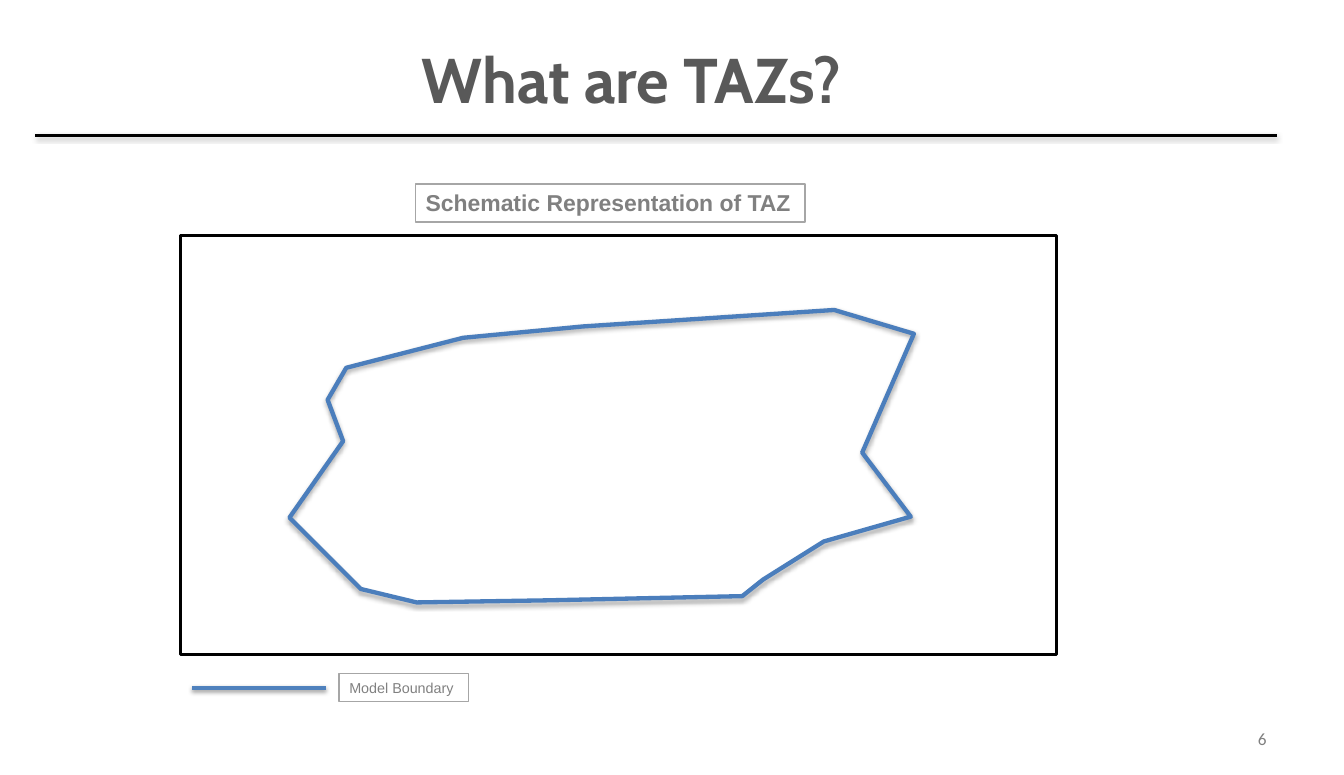
from dataclasses import dataclass

import lxml.etree
import pptx
import pptx.dml.color
import pptx.enum.shapes
import pptx.enum.text
import pptx.oxml.ns
import pptx.util

Pt = pptx.util.Pt
Align = pptx.enum.text.PP_ALIGN
Anchor = pptx.enum.text.MSO_ANCHOR


@dataclass
class Label:
    text: str
    left: float
    top: float
    width: float
    height: float
    font: dict
    color: str
    align: Align = Align.LEFT
    anchor: Anchor = Anchor.TOP
    border: str = ""


@dataclass
class Rule:
    left: float
    right: float
    y: float
    color: str
    weight: float


def rgb(value: str) -> pptx.dml.color.RGBColor:
    return pptx.dml.color.RGBColor.from_string(value)


def set_line(shape, color: str, weight: float) -> None:
    shape.line.color.rgb = rgb(color)
    shape.line.width = Pt(weight)


def add_shadow(shape, opacity: int, distance: float) -> None:
    """Give an outlined shape a soft black shadow straight below it."""
    qn = pptx.oxml.ns.qn
    effects = lxml.etree.SubElement(shape._element.spPr, qn("a:effectLst"))
    shadow = lxml.etree.SubElement(
        effects, qn("a:outerShdw"), blurRad=str(Pt(3.1)),
        dist=str(Pt(distance)), dir="5400000", rotWithShape="0")
    color = lxml.etree.SubElement(shadow, qn("a:srgbClr"), val="000000")
    lxml.etree.SubElement(color, qn("a:alpha"), val=str(opacity * 1000))


def add_label(slide, label: Label) -> None:
    shape = slide.shapes.add_textbox(
        Pt(label.left), Pt(label.top), Pt(label.width), Pt(label.height))
    frame = shape.text_frame
    frame.word_wrap = not label.border
    frame.vertical_anchor = label.anchor
    if label.border:
        frame.auto_size = pptx.enum.text.MSO_AUTO_SIZE.SHAPE_TO_FIT_TEXT
        set_line(shape, label.border, 1)
    paragraph = frame.paragraphs[0]
    paragraph.alignment = label.align
    run = paragraph.add_run()
    run.text = label.text
    for name, value in label.font.items():
        setattr(run.font, name, value)
    run.font.color.rgb = rgb(label.color)


def add_rule(slide, rule: Rule) -> None:
    connector = slide.shapes.add_connector(
        pptx.enum.shapes.MSO_CONNECTOR.STRAIGHT,
        Pt(rule.left), Pt(rule.y), Pt(rule.right), Pt(rule.y))
    set_line(connector, rule.color, rule.weight)
    add_shadow(connector, 38, 1.6)


def add_frame(slide) -> None:
    frame = slide.shapes.add_shape(
        pptx.enum.shapes.MSO_SHAPE.RECTANGLE,
        Pt(126), Pt(164.2), Pt(609.8), Pt(291.6))
    frame.shadow.inherit = False
    frame.fill.solid()
    frame.fill.fore_color.rgb = rgb("FFFFFF")
    set_line(frame, "000000", 2)


def add_boundary(slide, points: list[tuple[float, float]]) -> None:
    builder = slide.shapes.build_freeform(
        Pt(points[0][0]), Pt(points[0][1]))
    builder.add_line_segments(
        [(Pt(x), Pt(y)) for x, y in points[1:]], close=True)
    boundary = builder.convert_to_shape()
    boundary.fill.background()
    set_line(boundary, "4B7EBC", 3)
    add_shadow(boundary, 35, 1.8)


LABELS = [
    Label("6", 671, 500.4, 218.2, 28.8,
          {"name": "Calibri", "size": Pt(12)}, "808080",
          Align.RIGHT, Anchor.MIDDLE),
    Label("What are TAZs?", 129.6, 24.5, 620.6, 83.5,
          {"name": "Cabin", "size": Pt(44), "bold": True}, "595959",
          Align.CENTER),
    Label("Model Boundary", 236.2, 469.4, 90, 19.4,
          {"name": "Arial", "size": Pt(10)}, "808080", border="A6A6A6"),
    Label("Schematic Representation of TAZ", 289.4, 128.2, 271.4, 26.6,
          {"name": "Arial", "size": Pt(16), "bold": True}, "808080",
          border="A6A6A6"),
]
RULES = [
    Rule(24.5, 889.2, 94.3, "000000", 2),     # below the title
    Rule(133.9, 226.8, 479.5, "4F81BD", 3),   # legend key
]
BOUNDARY = [
    (201.6, 360.7), (251.3, 410.4), (290.2, 419.8), (382.3, 418.3),
    (517, 415.4), (531.4, 403.9), (573.8, 377.3), (634.3, 360),
    (600.5, 315.4), (636.5, 232.6), (581, 216), (406.1, 227.5),
    (322.6, 235.4), (241.2, 256.3), (228.2, 278.6), (239, 307.4),
]


def main() -> None:
    presentation = pptx.Presentation()
    presentation.slide_width = Pt(936)
    presentation.slide_height = Pt(540)
    slide = presentation.slides.add_slide(presentation.slide_layouts[6])

    # Map frame and zone outline
    add_frame(slide)
    add_boundary(slide, BOUNDARY)

    # Title rule and legend key
    for rule in RULES:
        add_rule(slide, rule)

    # Title, captions and page number
    for label in LABELS:
        add_label(slide, label)

    presentation.save("out.pptx")


if __name__ == "__main__":
    main()
